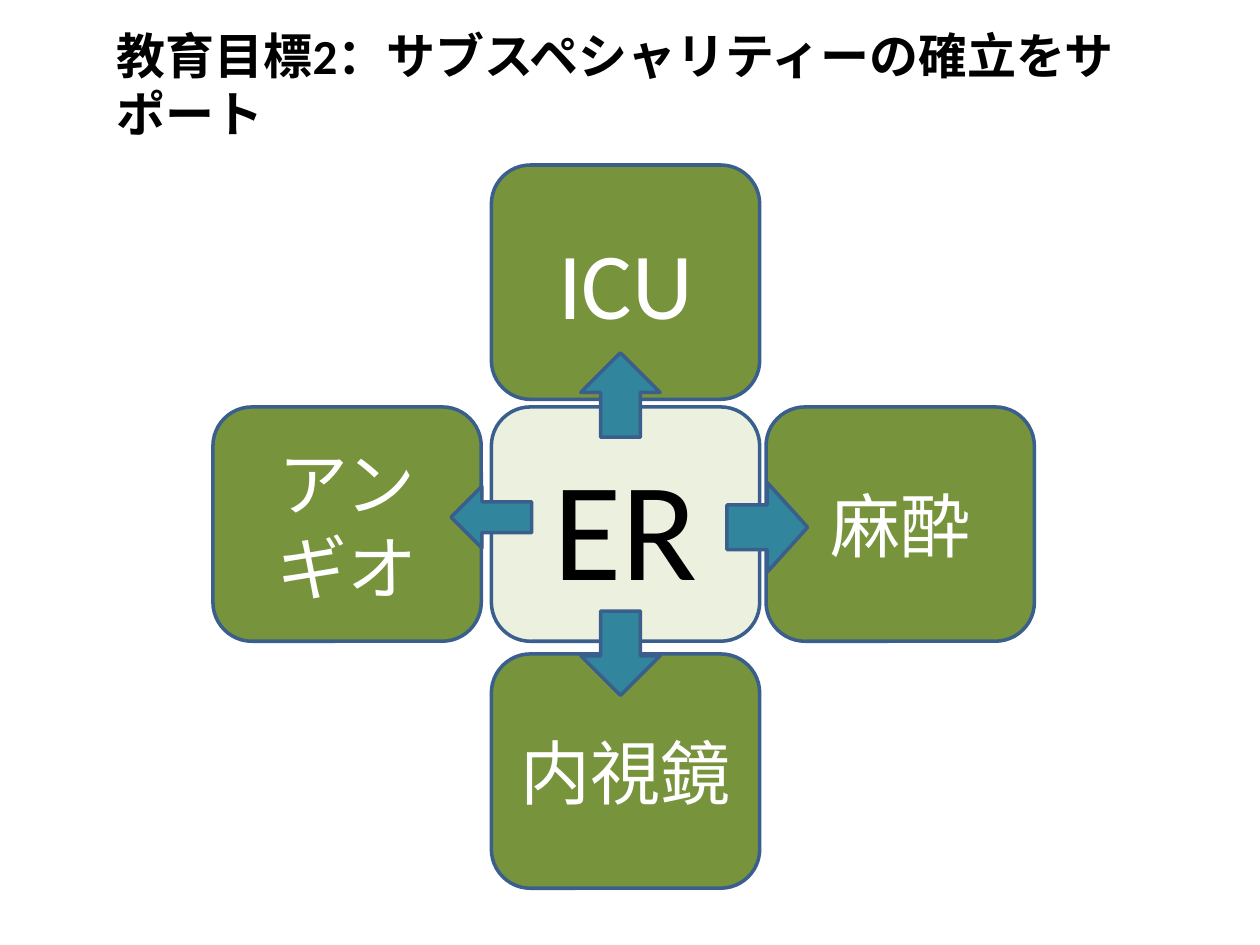
from pptx import Presentation
from pptx.dml.color import RGBColor
from pptx.enum.shapes import MSO_SHAPE
from pptx.enum.text import MSO_ANCHOR, MSO_AUTO_SIZE, PP_ALIGN
from pptx.util import Inches, Pt

FONT = "Calibri"
BLACK, WHITE = "000000", "FFFFFF"
PALE, GREEN, TEAL, EDGE = "EBF1DE", "77933C", "31859C", "3A5F8C"
BOX_W, BOX_H = 2.13, 1.86
MID_X, MID_Y = 3.9, 3.23


def color(code):
    return RGBColor.from_string(code)


def write(frame, lines, size, ink, align, bold=False):
    for i, line in enumerate(lines):
        para = frame.paragraphs[0] if i == 0 else frame.add_paragraph()
        para.text = line
        para.alignment = align
        para.font.name = FONT
        para.font.size = Pt(size)
        para.font.bold = bold
        para.font.color.rgb = color(ink)


def add_shape(slide, kind, left, top, width, height, fill):
    shape = slide.shapes.add_shape(
        kind, Inches(left), Inches(top), Inches(width), Inches(height))
    shape.shadow.inherit = False
    shape.fill.solid()
    shape.fill.fore_color.rgb = color(fill)
    shape.line.color.rgb = color(EDGE)
    shape.line.width = Pt(2)
    return shape


def add_box(slide, left, top, lines, size, fill=GREEN, ink=WHITE):
    box = add_shape(slide, MSO_SHAPE.ROUNDED_RECTANGLE,
                    left, top, BOX_W, BOX_H, fill)
    frame = box.text_frame
    frame.word_wrap = True
    frame.vertical_anchor = MSO_ANCHOR.MIDDLE
    write(frame, lines, size, ink, PP_ALIGN.CENTER)


def add_title(slide, text):
    box = slide.shapes.add_textbox(
        Inches(0.83), Inches(0.15), Inches(8.53), Inches(0.57))
    frame = box.text_frame
    frame.word_wrap = True
    frame.auto_size = MSO_AUTO_SIZE.SHAPE_TO_FIT_TEXT
    write(frame, [text], 28, BLACK, PP_ALIGN.LEFT, bold=True)


def main():
    deck = Presentation()
    deck.slide_width, deck.slide_height = Inches(10), Inches(7.5)
    slide = deck.slides.add_slide(deck.slide_layouts[6])

    # Centre and the four specialties around it
    add_box(slide, MID_X, MID_Y, ["ER"], 80, PALE, BLACK)
    add_box(slide, 6.08, MID_Y, ["麻酔"], 40)
    add_box(slide, MID_X, 5.19, ["内視鏡"], 40)
    add_box(slide, MID_X, 1.31, ["ICU"], 54)
    add_box(slide, 1.69, MID_Y, ["アン", "ギオ"], 40)

    # Arrows from the centre outwards
    arrows = [
        (MSO_SHAPE.RIGHT_ARROW, 5.77, 3.83, 0.64, 0.71),
        (MSO_SHAPE.LEFT_ARROW, 3.58, 3.86, 0.64, 0.49),
        (MSO_SHAPE.UP_ARROW, 4.61, 2.8, 0.63, 0.67),
        (MSO_SHAPE.DOWN_ARROW, 4.61, 4.85, 0.63, 0.67),
    ]
    for kind, left, top, width, height in arrows:
        add_shape(slide, kind, left, top, width, height, TEAL)

    add_title(slide, "教育目標2：サブスペシャリティーの確立をサポート")
    deck.save("out.pptx")


if __name__ == "__main__":
    main()
